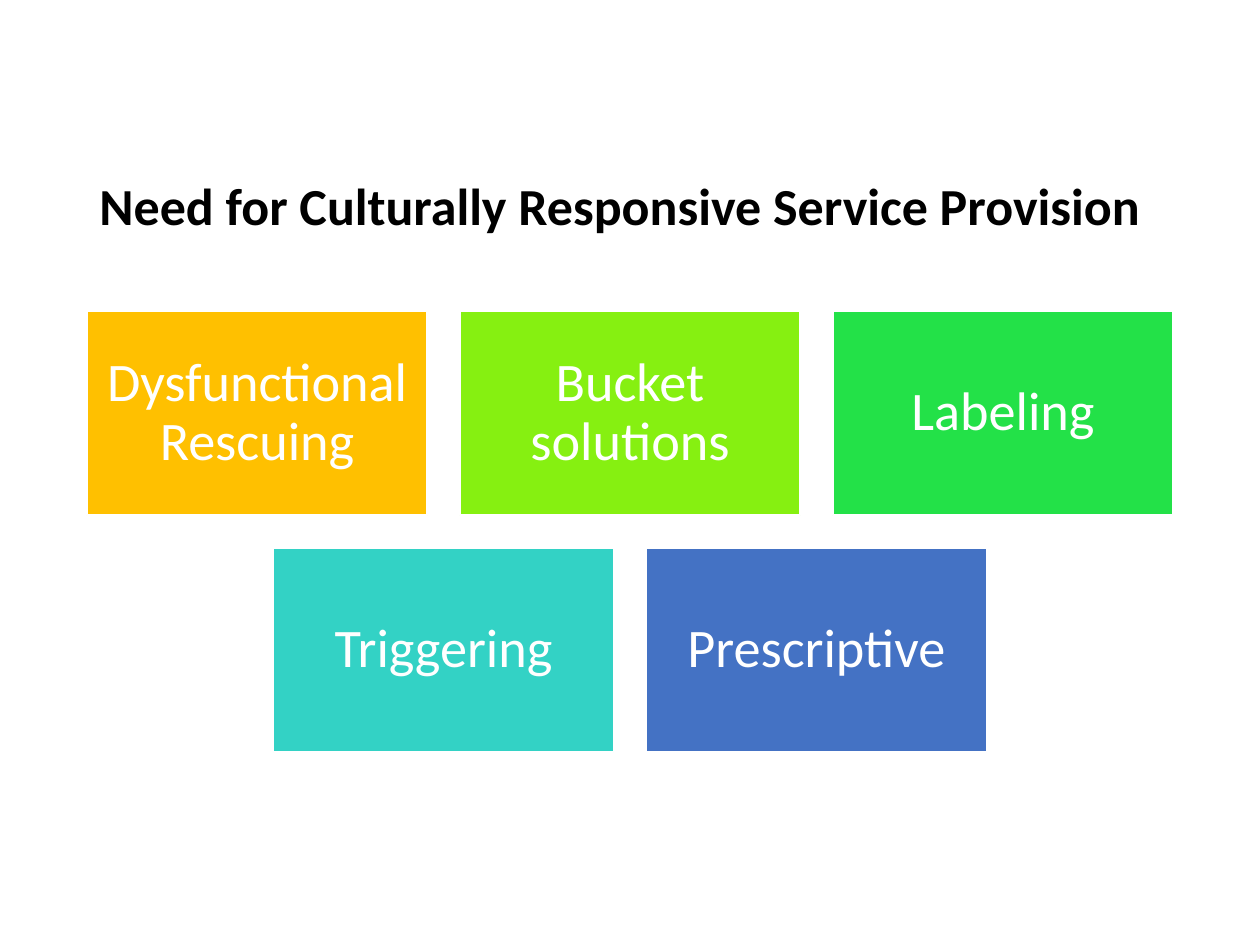
import pptx
import pptx.dml.color
import pptx.enum.shapes
import pptx.enum.text
import pptx.util
from pptx.util import Inches

COLORS = {
    "black": "000000",
    "white": "FFFFFF",
    "amber": "FFC000",
    "lime": "86F011",
    "green": "23E148",
    "teal": "33D2C5",
    "blue": "4472C4",
}
ROWS = [
    [("Dysfunctional Rescuing", "amber"), ("Bucket solutions", "lime"), ("Labeling", "green")],
    [("Triggering", "teal"), ("Prescriptive", "blue")],
]
SLIDE_WIDTH = 10
BOX_WIDTH, BOX_HEIGHT = 2.7, 1.62
COLUMN_STEP, ROW_STEP = 2.96, 1.88
GRID_TOP = 2.47


def rgb(name):
    return pptx.dml.color.RGBColor.from_string(COLORS[name])


def write_text(shape, text, size, color, alignment, bold=False):
    text_frame = shape.text_frame
    text_frame.text = text
    text_frame.word_wrap = True
    text_frame.vertical_anchor = pptx.enum.text.MSO_ANCHOR.MIDDLE
    paragraph = text_frame.paragraphs[0]
    paragraph.alignment = alignment
    paragraph.line_spacing = 0.9
    font = paragraph.runs[0].font
    font.name = "Calibri"
    font.size = pptx.util.Pt(size)
    font.bold = bold
    font.color.rgb = rgb(color)


presentation = pptx.Presentation()
presentation.slide_width = Inches(SLIDE_WIDTH)
presentation.slide_height = Inches(7.5)
slide = presentation.slides.add_slide(presentation.slide_layouts[6])

title = slide.shapes.add_textbox(Inches(0.69), Inches(1.11), Inches(8.62), Inches(1.09))
write_text(title, "Need for Culturally Responsive Service Provision", 29.7, "black",
           pptx.enum.text.PP_ALIGN.LEFT, bold=True)

for row_index, row in enumerate(ROWS):
    # Each row is centred on the slide
    row_width = BOX_WIDTH + (len(row) - 1) * COLUMN_STEP
    row_left = (SLIDE_WIDTH - row_width) / 2
    for column_index, (label, color) in enumerate(row):
        box = slide.shapes.add_shape(
            pptx.enum.shapes.MSO_SHAPE.RECTANGLE,
            Inches(row_left + column_index * COLUMN_STEP),
            Inches(GRID_TOP + row_index * ROW_STEP),
            Inches(BOX_WIDTH), Inches(BOX_HEIGHT))
        box.shadow.inherit = False
        box.fill.solid()
        box.fill.fore_color.rgb = rgb(color)
        box.line.color.rgb = rgb("white")
        box.line.width = pptx.util.Pt(1)
        text_frame = box.text_frame
        text_frame.margin_left = text_frame.margin_right = Inches(0.13)
        text_frame.margin_top = text_frame.margin_bottom = Inches(0.13)
        write_text(box, label, 31, "white", pptx.enum.text.PP_ALIGN.CENTER)

presentation.save("out.pptx")
